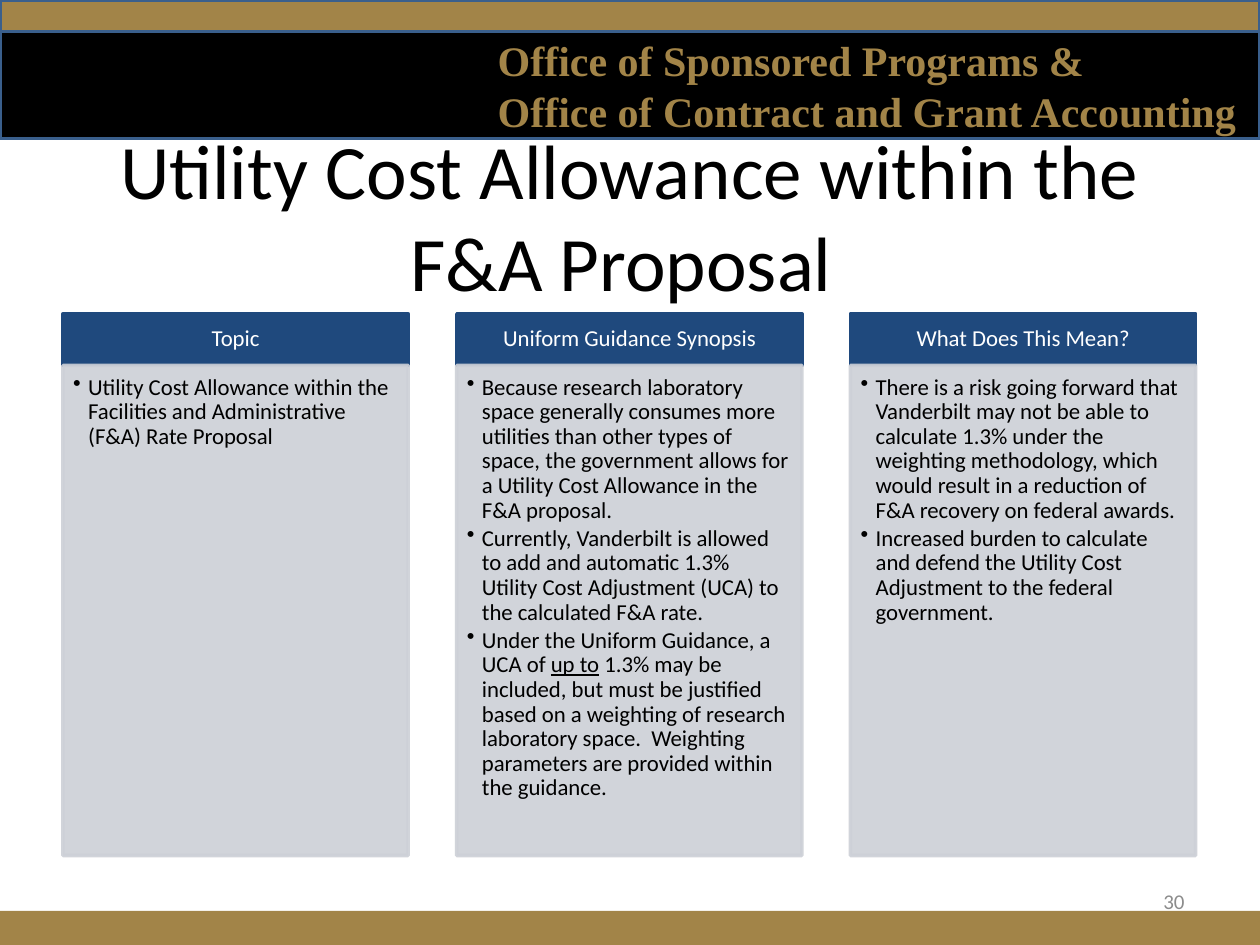
from dataclasses import dataclass

import lxml.etree
import pptx
import pptx.dml.color
import pptx.enum.shapes
import pptx.enum.text
import pptx.oxml.ns
import pptx.util

Inches = pptx.util.Inches
Pt = pptx.util.Pt
Align = pptx.enum.text.PP_ALIGN
Anchor = pptx.enum.text.MSO_ANCHOR
qn = pptx.oxml.ns.qn


@dataclass(frozen=True)
class Theme:
    gold: str = "A28448"
    black: str = "000000"
    white: str = "FFFFFF"
    navy: str = "1F497D"
    panel: str = "CDD0D7"
    band_edge: str = "3A5F8C"
    muted: str = "8C8C8C"
    sans: str = "Calibri"
    serif: str = "Times New Roman"
    title: int = 44
    banner: int = 24
    body: int = 13
    number: int = 12


THEME = Theme()

TITLE = "Utility Cost Allowance within the F&A Proposal "
OFFICES = [
    "Office of Sponsored Programs &",
    "Office of Contract and Grant Accounting",
]
COLUMNS = [
    ("Topic", [
        "Utility Cost Allowance within the Facilities and Administrative (F&A) Rate Proposal",
    ]),
    ("Uniform Guidance Synopsis", [
        "Because research laboratory space generally consumes more utilities than other types of "
        "space, the government allows for a Utility Cost Allowance in the F&A proposal.",
        "Currently, Vanderbilt is allowed to add and automatic 1.3% Utility Cost Adjustment (UCA) "
        "to the calculated F&A rate.",
        [
            "Under the Uniform Guidance, a UCA of ",
            ("up to", {"underline": True}),
            " 1.3% may be included, but must be justified based on a weighting of research "
            "laboratory space.  Weighting parameters are provided within the guidance.",
        ],
    ]),
    ("What Does This Mean?", [
        "There is a risk going forward that Vanderbilt may not be able to calculate 1.3% under the "
        "weighting methodology, which would result in a reduction of F&A recovery on federal awards.",
        "Increased burden to calculate and defend the Utility Cost Adjustment to the federal "
        "government.",
    ]),
]


def rgb(color):
    return pptx.dml.color.RGBColor.from_string(color)


def add_run(paragraph, text, size, color, font=THEME.sans, bold=False, underline=False):
    run = paragraph.add_run()
    run.text = text
    run.font.name = font
    run.font.size = Pt(size)
    run.font.bold = bold
    run.font.underline = underline
    run.font.color.rgb = rgb(color)


def add_bullet(paragraph):
    properties = paragraph._p.get_or_add_pPr()
    properties.set("marL", str(Inches(0.12)))
    properties.set("indent", str(Inches(-0.12)))
    lxml.etree.SubElement(properties, qn("a:buChar"), char="•")


def write(holder, paragraphs, align=Align.LEFT, anchor=Anchor.TOP,
          insets=(0.1, 0.05, 0.1, 0.05), bullet=False, spacing=None, after=None, **style):
    frame = holder.text_frame
    frame.word_wrap = True
    frame.vertical_anchor = anchor
    (frame.margin_left, frame.margin_top,
     frame.margin_right, frame.margin_bottom) = map(Inches, insets)
    for index, content in enumerate(paragraphs):
        paragraph = frame.add_paragraph() if index else frame.paragraphs[0]
        paragraph.alignment = align
        if spacing:
            paragraph.line_spacing = spacing
        if after:
            paragraph.space_after = Pt(after)
        if bullet:
            add_bullet(paragraph)
        for part in [content] if isinstance(content, str) else content:
            text, changes = (part, {}) if isinstance(part, str) else part
            add_run(paragraph, text, **{**style, **changes})


def text_box(slide, box, paragraphs, **formatting):
    holder = slide.shapes.add_textbox(*map(Inches, box))
    write(holder, paragraphs, **formatting)


def rectangle(slide, box, fill, edge=None, opacity=100):
    shape = slide.shapes.add_shape(
        pptx.enum.shapes.MSO_SHAPE.RECTANGLE, *map(Inches, box))
    shape.shadow.inherit = False
    shape.fill.solid()
    shape.fill.fore_color.rgb = rgb(fill)
    if edge:
        shape.line.color.rgb = rgb(edge)
        shape.line.width = Pt(2)
    else:
        shape.line.fill.background()
    if opacity < 100:
        for color in shape._element.spPr.iter(qn("a:srgbClr")):
            lxml.etree.SubElement(color, qn("a:alpha"), val=str(opacity * 1000))
    return shape


def add_banner(slide, left, top, width, height):
    strip = 0.25
    rectangle(slide, (left, top + strip, width, height - strip), THEME.black, THEME.band_edge)
    text_box(slide, (left + 3.75, top + 0.22, width - 3.75, 0.91), OFFICES,
             anchor=Anchor.MIDDLE, insets=(0.2, 0.05, 0.1, 0.05),
             size=THEME.banner, color=THEME.gold, font=THEME.serif, bold=True)
    rectangle(slide, (left, top, width, strip), THEME.gold, THEME.band_edge)


def add_column(slide, left, top, width, height, heading, points):
    heading_height = 0.41
    header = rectangle(slide, (left, top, width, heading_height), THEME.navy, THEME.navy)
    write(header, [heading], align=Align.CENTER, anchor=Anchor.MIDDLE,
          insets=(0.1, 0.06, 0.1, 0.06), spacing=0.9,
          size=THEME.body, color=THEME.white)
    panel = rectangle(slide, (left, top + heading_height, width, height - heading_height),
                      THEME.panel, THEME.panel, opacity=90)
    write(panel, points, insets=(0.08, 0.08, 0.1, 0.11), bullet=True, spacing=0.9,
          after=2, size=THEME.body, color=THEME.black)


def add_columns(slide, left, top, width, height):
    column_width = 2.74
    pitch = (width - column_width) / (len(COLUMNS) - 1)
    for index, (heading, points) in enumerate(COLUMNS):
        add_column(slide, left + index * pitch, top, column_width, height, heading, points)


def add_footer(slide, left, top, width, height):
    rectangle(slide, (left, top, width, height), THEME.gold)
    text_box(slide, (left + 7.17, top - 0.28, 2.33, 0.4), ["30"], align=Align.RIGHT,
             anchor=Anchor.MIDDLE, size=THEME.number, color=THEME.muted)


def main():
    deck = pptx.Presentation()
    deck.slide_width, deck.slide_height = Inches(10), Inches(7.5)
    slide = deck.slides.add_slide(deck.slide_layouts[6])
    add_banner(slide, 0, 0, 10, 1.1)
    text_box(slide, (0.5, 0.92, 9, 0.75), [TITLE], align=Align.CENTER,
             size=THEME.title, color=THEME.black)
    add_columns(slide, 0.5, 2.49, 8.99, 4.3)
    add_footer(slide, 0, 7.23, 10, 0.27)
    deck.save("out.pptx")


if __name__ == "__main__":
    main()
